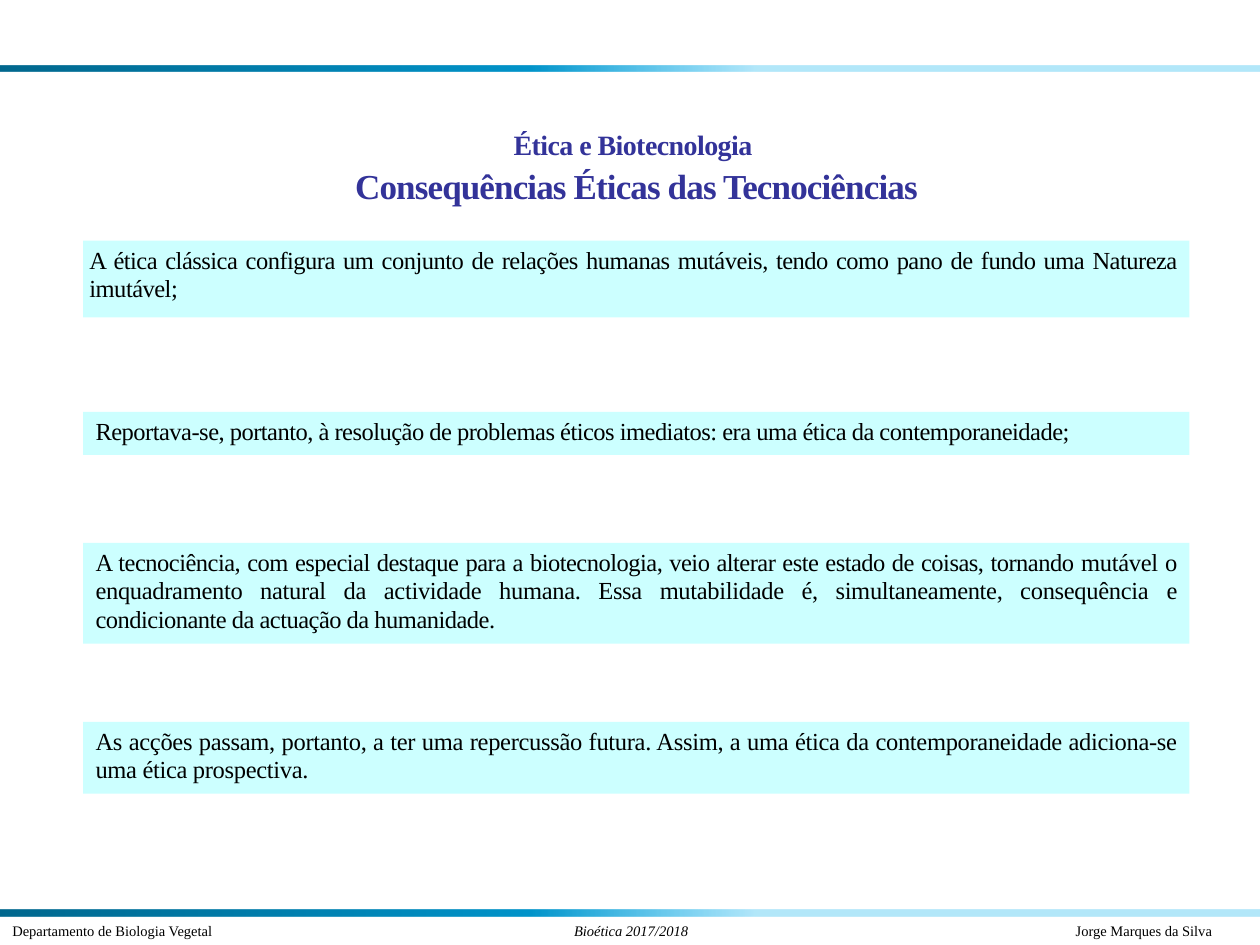
import lxml.etree
import pptx
import pptx.dml.color
import pptx.enum.shapes
import pptx.enum.text
import pptx.oxml
import pptx.oxml.ns
import pptx.util
from dataclasses import dataclass
from pptx.util import Inches

ALIGN = pptx.enum.text.PP_ALIGN


@dataclass(frozen=True)
class Theme:
    font: str = "Times New Roman"
    title: str = "333399"
    text: str = "000000"
    panel: str = "CCFFFF"
    bar_stops: tuple = ((0, "00688E", 100), (42, "0094CA", 100), (60, "00B0F0", 30))
    subtitle_size: float = 16
    title_size: float = 20
    body_size: float = 14
    footer_size: float = 8.3


theme = Theme()


def add_run(paragraph, text, size, color, spacing=0, bold=False, italic=False):
    """Add a run; spacing is the letter spacing in points."""
    run = paragraph.add_run()
    run.text = text
    formats = {"name": theme.font, "size": pptx.util.Pt(size), "bold": bold, "italic": italic}
    for name, value in formats.items():
        setattr(run.font, name, value)
    run.font.color.rgb = pptx.dml.color.RGBColor.from_string(color)
    if spacing:
        run.font._element.set("spc", str(round(spacing * 100)))


def set_frame(shape, left, top, right, bottom):
    """Wrap the text, anchor it at the top and set its insets in inches."""
    frame = shape.text_frame
    formats = {
        "word_wrap": True,
        "vertical_anchor": pptx.enum.text.MSO_ANCHOR.TOP,
        "margin_left": Inches(left),
        "margin_top": Inches(top),
        "margin_right": Inches(right),
        "margin_bottom": Inches(bottom),
    }
    for name, value in formats.items():
        setattr(frame, name, value)
    return frame


presentation = pptx.Presentation()
presentation.slide_width = Inches(10)
presentation.slide_height = Inches(7.5)
slide = presentation.slides.add_slide(presentation.slide_layouts[6])
rectangle = pptx.enum.shapes.MSO_SHAPE.RECTANGLE

# Footer: left, centred and right-aligned parts on tab stops
footer = slide.shapes.add_textbox(Inches(0), Inches(7.27), Inches(10), Inches(0.19))
paragraph = set_frame(footer, 0.1, 0.05, 0.1, 0.05).paragraphs[0]
tab_list = lxml.etree.SubElement(
    paragraph._p.get_or_add_pPr(), pptx.oxml.ns.qn("a:tabLst")
)
for position, alignment in ((4.91, "ctr"), (9.52, "r")):
    tab = lxml.etree.SubElement(tab_list, pptx.oxml.ns.qn("a:tab"))
    tab.set("pos", str(Inches(position)))
    tab.set("algn", alignment)
for text, italic in (
    ("Departamento de Biologia Vegetal\t", False),
    ("Bioética 2017/2018\t", True),
    ("Jorge Marques da Silva", False),
):
    add_run(paragraph, text, theme.footer_size, theme.text, italic=italic)

# Gradient bars
stops = "".join(
    f'<a:gs pos="{position * 1000}"><a:srgbClr val="{color}">'
    f'<a:alpha val="{opacity * 1000}"/></a:srgbClr></a:gs>'
    for position, color, opacity in theme.bar_stops
)
gradient_xml = (
    f'<a:gradFill {pptx.oxml.ns.nsdecls("a")} rotWithShape="1">'
    f'<a:gsLst>{stops}</a:gsLst><a:lin ang="0" scaled="0"/></a:gradFill>'
)
for top in (7.22, 0.52):
    bar = slide.shapes.add_shape(rectangle, Inches(0), Inches(top), Inches(10), Inches(0.05))
    bar.shadow.inherit = False
    bar.line.fill.background()
    geometry = bar._element.spPr.find(pptx.oxml.ns.qn("a:prstGeom"))
    geometry.addnext(pptx.oxml.parse_xml(gradient_xml))

# Title
title = slide.shapes.add_textbox(Inches(0.1), Inches(0.99), Inches(9.9), Inches(0.95))
frame = set_frame(title, 0, 0, 0, 0)
for index, (text, size, spacing, line_spacing) in enumerate((
    ("Ética e Biotecnologia ", theme.subtitle_size, -0.3, 1.08),
    ("Consequências Éticas das Tecnociências", theme.title_size, -0.5, 1.09),
)):
    paragraph = frame.add_paragraph() if index else frame.paragraphs[0]
    paragraph.alignment = ALIGN.CENTER
    paragraph.line_spacing = line_spacing
    add_run(paragraph, text, size, theme.title, spacing, bold=True)

# Statement panels: top, height, text indent, alignment, (text, letter spacing) runs
panels = (
    (1.91, 0.61, 0.05, ALIGN.JUSTIFY, (
        ("A ética clássica configura um conjunto de relações humanas mutáveis, "
         "tendo como pano de fundo uma Natureza imutável;", -0.3),
    )),
    (3.27, 0.34, 0.1, ALIGN.LEFT, (
        ("Reportava-se, portanto, à resolução de problemas éticos imediatos: "
         "era uma ética da contemporaneidade;", -0.3),
    )),
    (4.31, 0.8, 0.1, ALIGN.JUSTIFY, (
        ("A tecnociência, com especial destaque para a biotecnologia, veio alterar "
         "este estado de coisas, tornando ", -0.3),
        ("mutável o enquadramento natural da actividade humana. Essa mutabilidade é, "
         "simultaneamente, consequência ", -0.2),
        ("e condicionante da actuação da humanidade.", -0.3),
    )),
    (5.73, 0.57, 0.1, ALIGN.JUSTIFY, (
        ("As acções passam, portanto, a ter uma repercussão futura. Assim, a uma ética "
         "da contemporaneidade adiciona-se uma ética prospectiva.", -0.2),
    )),
)
for top, height, indent, alignment, runs in panels:
    panel = slide.shapes.add_shape(
        rectangle, Inches(0.66), Inches(top), Inches(8.78), Inches(height)
    )
    panel.shadow.inherit = False
    panel.fill.solid()
    panel.fill.fore_color.rgb = pptx.dml.color.RGBColor.from_string(theme.panel)
    panel.line.fill.background()
    paragraph = set_frame(panel, indent, 0.05, 0.1, 0).paragraphs[0]
    paragraph.alignment = alignment
    paragraph.line_spacing = 0.96
    for text, spacing in runs:
        add_run(paragraph, text, theme.body_size, theme.text, spacing)

presentation.save("out.pptx")
